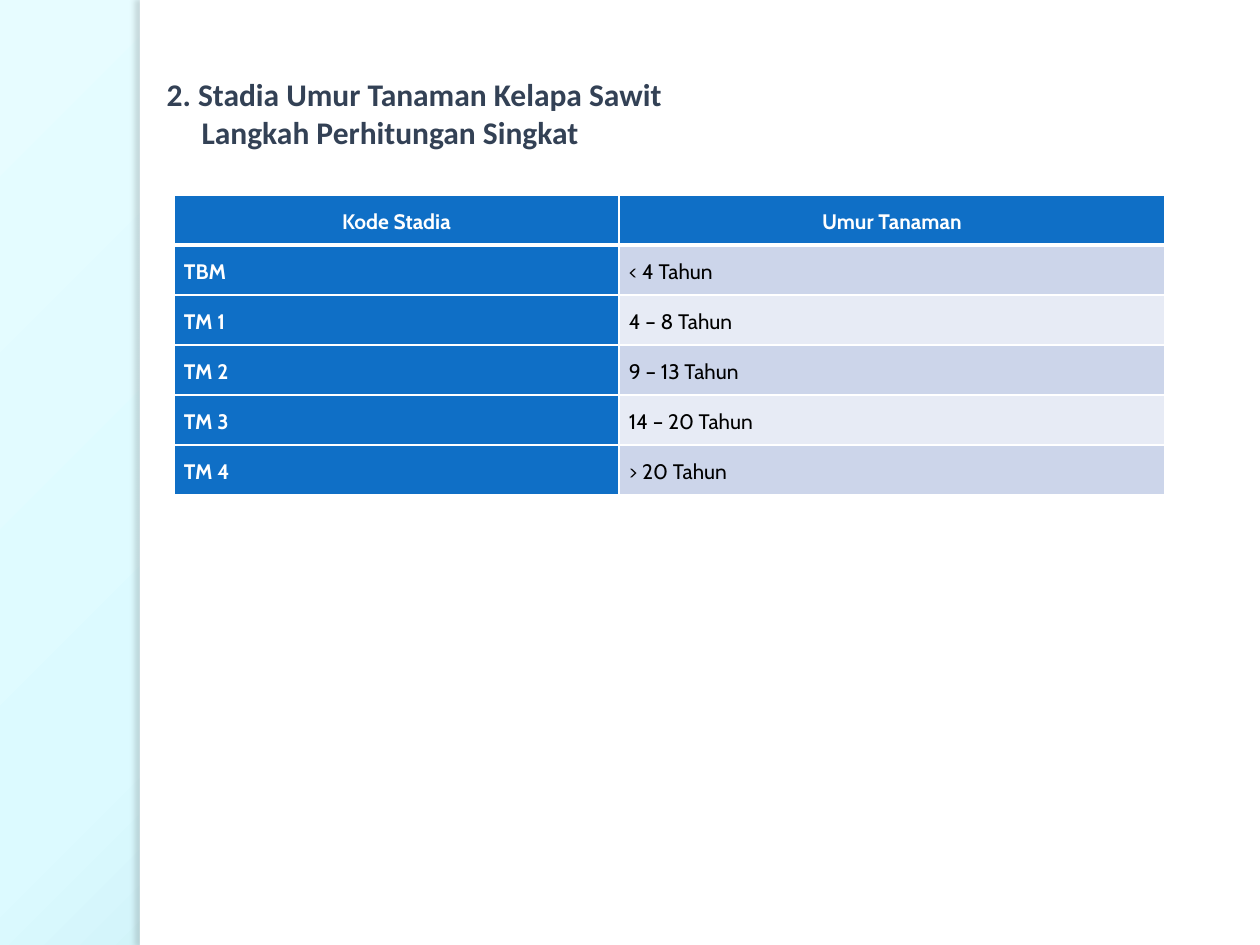
from dataclasses import dataclass

from lxml import etree
from pptx import Presentation
from pptx.dml.color import RGBColor
from pptx.enum.shapes import MSO_SHAPE
from pptx.enum.text import MSO_ANCHOR, MSO_AUTO_SIZE, PP_ALIGN
from pptx.oxml import parse_xml
from pptx.oxml.ns import nsdecls, qn
from pptx.util import Pt

RECTANGLE = MSO_SHAPE.RECTANGLE
MIDDLE = MSO_ANCHOR.MIDDLE
LEFT, CENTER = PP_ALIGN.LEFT, PP_ALIGN.CENTER
TITLE_ONLY_LAYOUT = 5


def px(length: int) -> int:
    """Turn px (126 to the inch) into EMU."""
    return round(length * 914400 / 126)


@dataclass(frozen=True)
class Theme:
    heading: str = "334155"
    text: str = "000000"
    white: str = "FFFFFF"
    accent: str = "0F6FC6"
    bands: tuple = ("CCD5EA", "E7EBF5")
    shadow: str = "6C7A7C"
    backdrop: tuple = ((0, "E7FCFF"), (40, "DCFAFF"), (100, "92CED7"))
    title_font: str = "Calibri"
    table_font: str = "Cabin"
    title_size: int = 18
    table_size: int = 12


@dataclass(frozen=True)
class Box:
    left: int
    top: int
    width: int
    height: int

    def emu(self) -> tuple:
        return tuple(map(px, (self.left, self.top, self.width, self.height)))


@dataclass(frozen=True)
class Stage:
    code: str
    age: str


THEME = Theme()
SLIDE = Box(0, 0, 1260, 945)
PANEL = Box(140, 0, 1120, 945)
PANEL_EDGE = Box(140, 0, 10, 945)
TITLE = Box(154, 66, 1042, 94)
TITLE_LINES = ("2. Stadia Umur Tanaman Kelapa Sawit", "Langkah Perhitungan Singkat")
SECOND_LINE_INDENT = 35
TABLE_LEFT, TABLE_TOP = 174, 195
COLUMN_WIDTHS = (445, 546)
ROW_HEIGHT = 50
CELL_MARGIN = 10
HEADER = Stage("Kode Stadia", "Umur Tanaman")
STAGES = (
    Stage("TBM", "< 4 Tahun"),
    Stage("TM 1", "4 – 8 Tahun"),
    Stage("TM 2", "9 – 13 Tahun"),
    Stage("TM 3", "14 – 20 Tahun"),
    Stage("TM 4", "> 20 Tahun"),
)


def set_backdrop(slide) -> None:
    """Fill the background with a gradient radiating from the top left."""
    stops = "".join(
        f'<a:gs pos="{position * 1000}"><a:srgbClr val="{color}"/></a:gs>'
        for position, color in THEME.backdrop
    )
    slide.element.cSld.insert(0, parse_xml(
        f'<p:bg {nsdecls("p", "a")}><p:bgPr><a:gradFill rotWithShape="1">'
        f'<a:gsLst>{stops}</a:gsLst><a:path path="circle">'
        '<a:fillToRect l="-24000" t="-20000" r="124000" b="120000"/></a:path>'
        '</a:gradFill><a:effectLst/></p:bgPr></p:bg>'
    ))


def add_panel(slide, box: Box):
    shape = slide.shapes.add_shape(RECTANGLE, *box.emu())
    shape.shadow.inherit = False
    shape.fill.solid()
    shape.fill.fore_color.rgb = RGBColor.from_string(THEME.white)
    shape.line.fill.background()
    return shape


def cast_shadow_left(shape) -> None:
    effects = shape.element.spPr.find(qn("a:effectLst"))
    shadow = etree.SubElement(effects, qn("a:outerShdw"), blurRad=str(Pt(3)),
                              dist=str(Pt(3)), dir="10800000", rotWithShape="0")
    color = etree.SubElement(shadow, qn("a:srgbClr"), val=THEME.shadow)
    etree.SubElement(color, qn("a:alpha"), val="25000")


def style_font(font, name: str, size: int, color: str, bold: bool) -> None:
    font.name, font.size, font.bold = name, Pt(size), bold
    font.color.rgb = RGBColor.from_string(color)


def set_title(slide) -> None:
    title = slide.shapes.title
    title.left, title.top, title.width, title.height = TITLE.emu()
    frame = title.text_frame
    frame.text = "\n".join(TITLE_LINES)
    frame.auto_size = MSO_AUTO_SIZE.NONE
    frame.vertical_anchor = MIDDLE
    for paragraph in frame.paragraphs:
        paragraph.alignment = LEFT
        paragraph.line_spacing = 1.0
        paragraph.space_before = Pt(0)
        style_font(paragraph.font, THEME.title_font, THEME.title_size, THEME.heading, True)
    properties = frame.paragraphs[1]._p.get_or_add_pPr()
    properties.set("marL", str(px(SECOND_LINE_INDENT)))
    properties.set("indent", "0")
    title.element.getparent().append(title.element)  # in front of the panels


def add_borders(cell, bottom_width: int) -> None:
    properties = cell._tc.get_or_add_tcPr()
    for side, width in (("L", 1), ("R", 1), ("T", 1), ("B", bottom_width)):
        line = etree.SubElement(properties, qn(f"a:ln{side}"), w=str(Pt(width)))
        fill = etree.SubElement(line, qn("a:solidFill"))
        etree.SubElement(fill, qn("a:srgbClr"), val=THEME.white)


def fill_cell(cell, text: str, fill: str, strong: bool, header: bool) -> None:
    cell.text = text
    cell.vertical_anchor = MIDDLE
    cell.margin_left = cell.margin_right = px(CELL_MARGIN)
    cell.margin_top = cell.margin_bottom = px(CELL_MARGIN)
    add_borders(cell, 3 if header else 1)
    cell.fill.solid()
    cell.fill.fore_color.rgb = RGBColor.from_string(fill)
    paragraph = cell.text_frame.paragraphs[0]
    paragraph.alignment = CENTER if header else LEFT
    paragraph.line_spacing = 1.15
    paragraph.space_after = Pt(18)
    color = THEME.white if strong else THEME.text
    style_font(paragraph.font, THEME.table_font, THEME.table_size, color, strong)


def add_stage_table(slide) -> None:
    rows = (HEADER, *STAGES)
    box = Box(TABLE_LEFT, TABLE_TOP, sum(COLUMN_WIDTHS), ROW_HEIGHT * len(rows))
    table = slide.shapes.add_table(len(rows), len(COLUMN_WIDTHS), *box.emu()).table
    table.first_col = True
    for column, width in zip(table.columns, COLUMN_WIDTHS):
        column.width = px(width)
    for index, stage in enumerate(rows):
        header = index == 0
        age_fill = THEME.accent if header else THEME.bands[(index - 1) % 2]
        fill_cell(table.cell(index, 0), stage.code, THEME.accent, True, header)
        fill_cell(table.cell(index, 1), stage.age, age_fill, header, header)


def main() -> None:
    presentation = Presentation()
    presentation.slide_width, presentation.slide_height = px(SLIDE.width), px(SLIDE.height)
    slide = presentation.slides.add_slide(presentation.slide_layouts[TITLE_ONLY_LAYOUT])
    set_backdrop(slide)
    add_panel(slide, PANEL)
    cast_shadow_left(add_panel(slide, PANEL_EDGE))
    add_stage_table(slide)
    set_title(slide)
    presentation.save("out.pptx")


if __name__ == "__main__":
    main()
